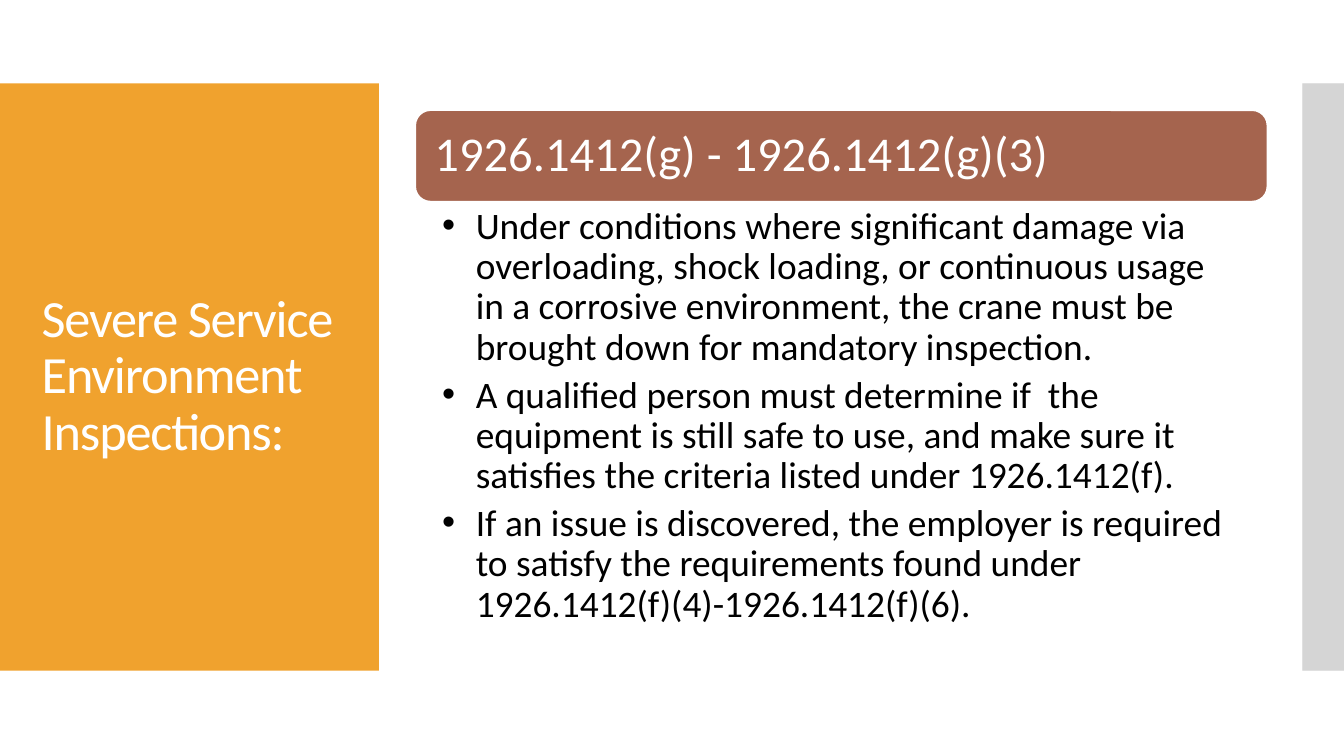
from copy import deepcopy
from lxml.etree import SubElement
from pptx import Presentation
from pptx.dml.color import RGBColor
from pptx.enum.shapes import MSO_SHAPE
from pptx.enum.text import MSO_ANCHOR, MSO_AUTO_SIZE, PP_ALIGN
from pptx.oxml.ns import qn
from pptx.util import Inches, Pt

HUES = {"gold": "F0A22E", "gray": "C8C8C8", "rust": "A5644E",
        "white": "FFFFFF", "black": "000000"}
RULES = [
    "Under conditions where significant damage via overloading, shock loading, "
    "or continuous usage in a corrosive environment, the crane must be brought "
    "down for mandatory inspection.",
    "A qualified person must determine if  the equipment is still safe to use, "
    "and make sure it satisfies the criteria listed under 1926.1412(f).",
    "If an issue is discovered, the employer is required to satisfy the "
    "requirements found under 1926.1412(f)(4)-1926.1412(f)(6).",
]


def hue(name):
    """Return the named colour."""
    return RGBColor.from_string(HUES[name])


def place(shape, box):
    """Move a shape to a box in inches."""
    shape.left, shape.top, shape.width, shape.height = map(Inches, box)


def block(slide, kind, box, fill, line=None):
    """Add a plain filled shape."""
    shape = slide.shapes.add_shape(kind, *map(Inches, box))
    shape.shadow.inherit = False
    shape.fill.solid()
    shape.fill.fore_color.rgb = hue(fill)
    if line:
        shape.line.color.rgb = hue(line)
        shape.line.width = Pt(0.85)
    else:
        shape.line.fill.background()
    return shape


def write(shape, lines, size, color, anchor=MSO_ANCHOR.MIDDLE,
          inset=(0.1, 0.05), after=0, track=None, bullet=False):
    """Fill a shape with formatted paragraphs."""
    frame = shape.text_frame
    frame.word_wrap = True
    frame.auto_size = MSO_AUTO_SIZE.NONE
    frame.vertical_anchor = anchor
    frame.margin_left = frame.margin_right = Inches(inset[0])
    frame.margin_top = frame.margin_bottom = Inches(inset[1])
    for i, line in enumerate(lines):
        para = frame.paragraphs[0] if i == 0 else frame.add_paragraph()
        para.alignment = PP_ALIGN.LEFT
        para.line_spacing = 0.9
        para.space_before, para.space_after = Pt(0), Pt(after)
        run = para.add_run()
        run.text = line
        run.font.name = "Calibri"
        run.font.size = Pt(size)
        run.font.color.rgb = hue(color)
        if track is not None:
            run.font._element.set("spc", str(track))
        if bullet:
            props = para._p.get_or_add_pPr()
            props.set("marL", str(Inches(0.25)))
            props.set("indent", str(Inches(-0.25)))
            SubElement(props, qn("a:buChar")).set("char", "•")


def panel(slide, box):
    """Draw the title panel on the left."""
    x, y, w, h = box
    back = block(slide, MSO_SHAPE.RECTANGLE, box, "gold")
    title = slide.shapes.title
    title.element.addprevious(back.element)
    place(title, (x + 0.21, y + 0.3, w - 0.4, h - 0.6))
    write(title, ["Severe Service Environment Inspections:"], 28, "white",
          track=-60)


def strip(slide, box):
    """Draw the pale right strip on the slide and its layout."""
    bar = block(slide, MSO_SHAPE.RECTANGLE, box, "gray")
    tone = bar.fill._xPr.find(qn("a:solidFill"))[0]
    SubElement(tone, qn("a:alpha")).set("val", "50000")
    under = deepcopy(bar.element)
    next(under.iter(qn("p:cNvPr"))).set("id", "20")
    slide.slide_layout.shapes.element.append(under)
    slide.shapes.title.element.addprevious(bar.element)


def content(slide, box):
    """Draw the heading bar with its list below."""
    x, y, w, h = box
    head = 0.68
    bar = block(slide, MSO_SHAPE.ROUNDED_RECTANGLE, (x, y, w, head),
                "rust", "white")
    write(bar, ["1926.1412(g) - 1926.1412(g)(3)"], 26, "white",
          inset=(0.11, 0.11))
    body = slide.placeholders[1]
    place(body, (x, y + head, w, h - head))
    write(body, RULES, 20, "black", MSO_ANCHOR.TOP, (0.2, 0.04),
          after=4, bullet=True)
    bar.element.addnext(body.element)


def main():
    """Build and save the slide."""
    deck = Presentation()
    deck.slide_width = Inches(10)
    deck.slide_height = deck.slide_width * 9 // 16
    slide = deck.slides.add_slide(deck.slide_layouts[1])
    top, tall = 0.62, 4.37
    panel(slide, (0, top, 2.82, tall))
    strip(slide, (9.69, top, 0.32, tall))
    content(slide, (3.09, top + 0.2, 6.34, 3.99))
    deck.save("out.pptx")


if __name__ == "__main__":
    main()
